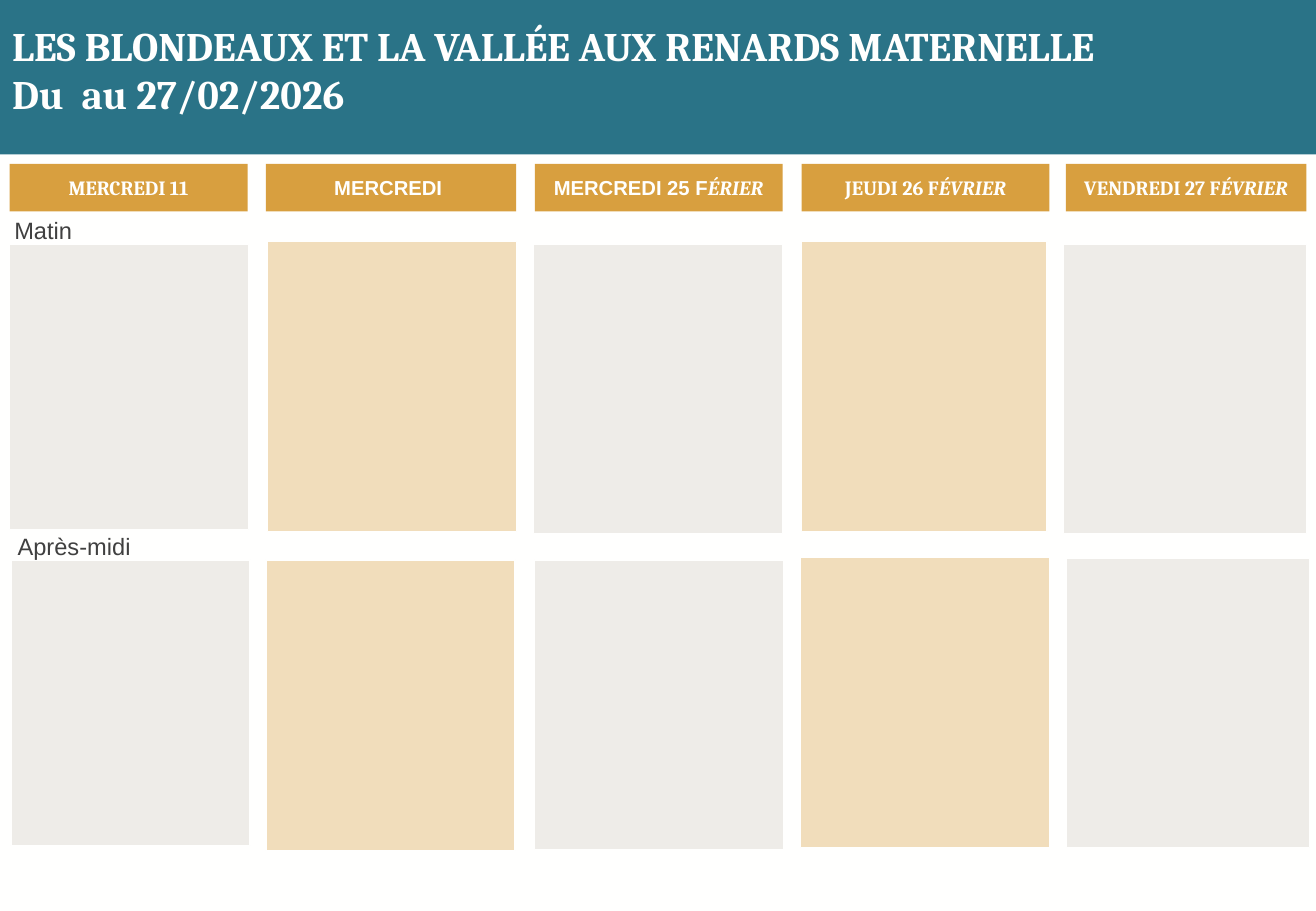
from lxml import etree
from pptx import Presentation
from pptx.dml.color import RGBColor
from pptx.enum import shapes, text
from pptx.oxml import ns
from pptx.util import Cm, Pt

TEAL = RGBColor(0x2A, 0x73, 0x87)
GOLD = RGBColor(0xD8, 0x9F, 0x3F)
GREY = RGBColor(0xEE, 0xEC, 0xE8)
WHITE = RGBColor(0xFF, 0xFF, 0xFE)
DARK = RGBColor(0x40, 0x40, 0x40)

TITLE = ("LES BLONDEAUX ET LA VALLÉE AUX RENARDS MATERNELLE",
         "Du  au 27/02/2026")

# left, width, runs as (wording, font, italic)
DAYS = [
    (0.2, 4.98, [("MERCREDI 11", "Cambria", False)]),
    (5.56, 5.23, [("MERCREDI ", "Arial", False)]),
    (11.18, 5.18, [("MERCREDI 25 F", "Arial", False), ("ÉRIER", "Cambria", True)]),
    (16.76, 5.18, [("JEUDI 26 F", "Cambria", False), ("ÉVRIER", "Cambria", True)]),
    (22.28, 5.03, [("VENDREDI 27 F", "Cambria", False), ("ÉVRIER", "Cambria", True)]),
]

# left, top, width, height of each day's slot
MORNING = [
    (0.2, 5.11, 5, 5.97),
    (5.59, 5.05, 5.21, 6.07),
    (11.15, 5.11, 5.21, 6.05),
    (16.76, 5.05, 5.13, 6.07),
    (22.23, 5.11, 5.08, 6.05),
]
AFTERNOON = [
    (0.23, 11.71, 5, 5.97),
    (5.56, 11.71, 5.21, 6.07),
    (11.18, 11.71, 5.21, 6.05),
    (16.74, 11.66, 5.21, 6.07),
    (22.3, 11.68, 5.08, 6.05),
]


def add_run(paragraph, wording, font, size, color, bold=False, italic=False):
    run = paragraph.add_run()
    run.text = wording
    run.font.name = font
    run.font.size = Pt(size)
    run.font.bold = bold
    run.font.italic = italic
    run.font.color.rgb = color


def add_block(slide, left, top, width, height, color):
    block = slide.shapes.add_shape(shapes.MSO_SHAPE.RECTANGLE,
                                   Cm(left), Cm(top), Cm(width), Cm(height))
    block.shadow.inherit = False
    block.fill.solid()
    block.fill.fore_color.rgb = color
    block.line.fill.background()
    return block


def fill_title(slide):
    title = slide.shapes.title
    title.left, title.top, title.width, title.height = Cm(0), Cm(0), Cm(27.51), Cm(3.23)
    title.fill.solid()
    title.fill.fore_color.rgb = TEAL
    frame = title.text_frame
    frame.auto_size = text.MSO_AUTO_SIZE.NONE
    frame.vertical_anchor = text.MSO_ANCHOR.MIDDLE
    frame.margin_bottom = Cm(0.45)
    heading = frame.paragraphs[0]
    heading.alignment = text.PP_ALIGN.LEFT
    establishment, period = TITLE
    add_run(heading, establishment, "Cambria", 24, WHITE, bold=True)
    heading.add_line_break()
    add_run(heading, period, "Cambria", 24, WHITE, bold=True)


def add_day(slide, left, width, runs):
    day = add_block(slide, left, 3.43, width, 0.99, GOLD)
    frame = day.text_frame
    frame.margin_left = frame.margin_right = Cm(0.1)
    frame.vertical_anchor = text.MSO_ANCHOR.MIDDLE
    heading = frame.paragraphs[0]
    heading.alignment = text.PP_ALIGN.CENTER
    for wording, font, italic in runs:
        add_run(heading, wording, font, 12, WHITE, bold=True, italic=italic)


def add_slots(slide, slots):
    """Add one row of slots, grey and translucent gold in turn."""
    for index, slot in enumerate(slots):
        translucent = index % 2 == 1
        block = add_block(slide, *slot, GOLD if translucent else GREY)
        block.line.color.rgb = WHITE
        block.line.width = Pt(0.75)
        if translucent:
            color = block.fill._xPr.find(ns.qn("a:solidFill"))[0]
            etree.SubElement(color, ns.qn("a:alpha")).set("val", "35000")


def add_period(slide, wording, left, top, width, alignment):
    box = slide.shapes.add_textbox(Cm(left), Cm(top), Cm(width), Cm(0.86))
    box.text_frame.word_wrap = True
    period = box.text_frame.paragraphs[0]
    period.alignment = alignment
    add_run(period, wording, "Arial", 14, DARK)


def main():
    prs = Presentation()
    prs.slide_width, prs.slide_height = Cm(27.51), Cm(19.05)
    slide = prs.slides.add_slide(prs.slide_layouts[5])
    slide.background.fill.solid()
    slide.background.fill.fore_color.rgb = WHITE

    fill_title(slide)
    add_slots(slide, MORNING)
    add_slots(slide, AFTERNOON)
    add_period(slide, "Matin", 0.05, 4.39, 2.03, text.PP_ALIGN.LEFT)
    add_period(slide, "Après-midi", -0.38, 11, 3.86, text.PP_ALIGN.CENTER)
    for day in DAYS:
        add_day(slide, *day)

    prs.save("out.pptx")


if __name__ == "__main__":
    main()
